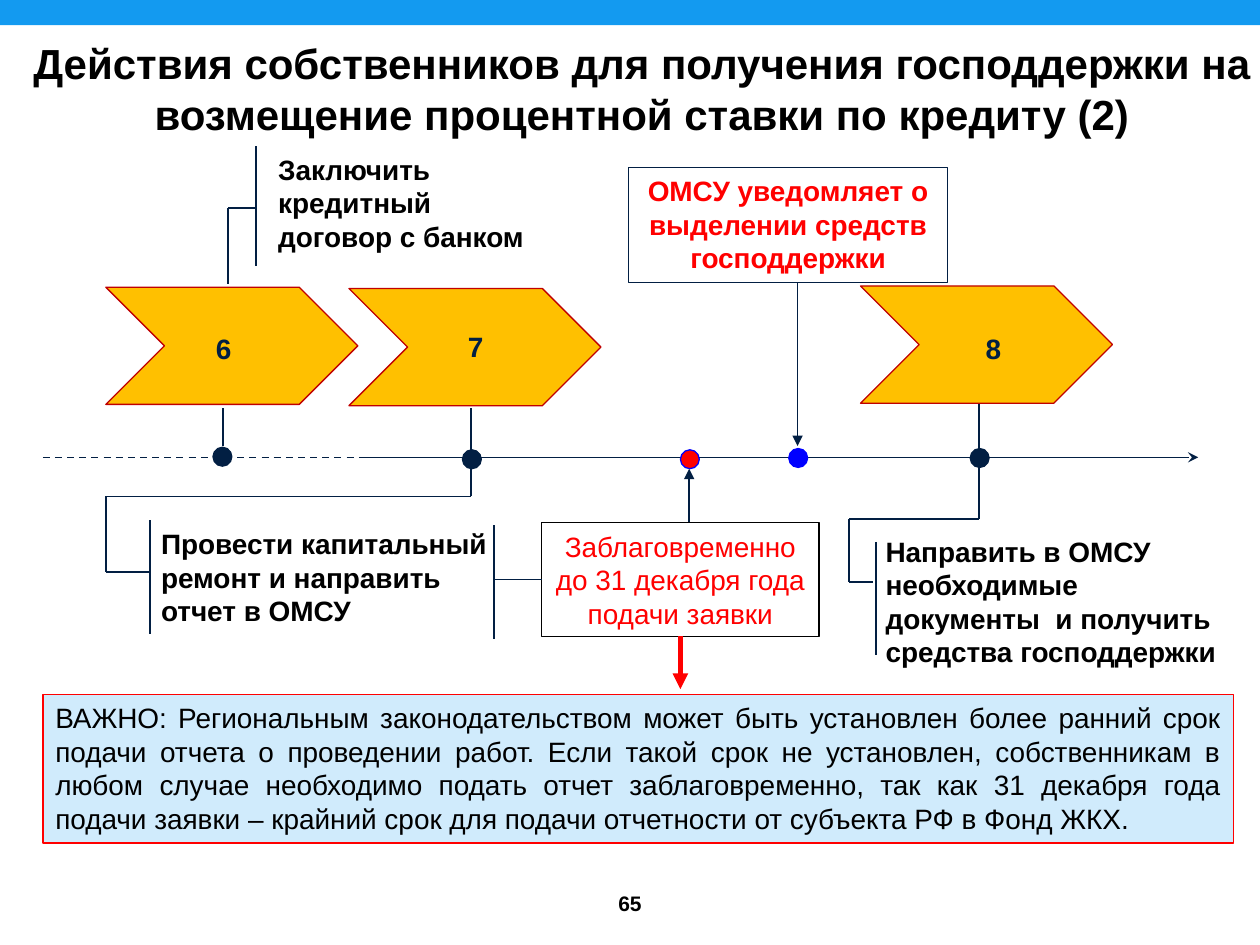
from lxml import etree
from pptx import Presentation
from pptx.dml.color import RGBColor
from pptx.enum.dml import MSO_LINE
from pptx.enum.shapes import MSO_CONNECTOR, MSO_SHAPE
from pptx.enum.text import MSO_ANCHOR, PP_ALIGN
from pptx.oxml.ns import qn
from pptx.util import Inches, Pt

NAVY = RGBColor(0x02, 0x1F, 0x43)
BLUE = RGBColor(0x00, 0x00, 0xFF)
RED = RGBColor(0xFF, 0x00, 0x00)
DARK_RED = RGBColor(0xC0, 0x00, 0x00)
ORANGE = RGBColor(0xFF, 0xC0, 0x00)
PALE_BLUE = RGBColor(0xD0, 0xEB, 0xFC)
BAR_BLUE = RGBColor(0x13, 0x9A, 0xF0)
WHITE = RGBColor(0xFF, 0xFF, 0xFF)
BLACK = RGBColor(0x00, 0x00, 0x00)

presentation = Presentation()
presentation.slide_width = Inches(10)
presentation.slide_height = Inches(7.5)
slide = presentation.slides.add_slide(presentation.slide_layouts[5])
shapes = slide.shapes


def write(shape, text, size=16, color=BLACK, bold=True, align=PP_ALIGN.LEFT,
          anchor=MSO_ANCHOR.TOP):
    frame = shape.text_frame
    frame.word_wrap = True
    frame.vertical_anchor = anchor
    frame.text = text
    paragraph = frame.paragraphs[0]
    paragraph.alignment = align
    font = paragraph.font
    font.name, font.size, font.bold = "Arial", Pt(size), bold
    font.color.rgb = color


def add_line(x1, y1, x2, y2, color=NAVY, width=1, arrow=None):
    line = shapes.add_connector(MSO_CONNECTOR.STRAIGHT, Inches(x1), Inches(y1),
                                Inches(x2), Inches(y2))
    line.line.color.rgb = color
    line.line.width = Pt(width)
    if arrow:
        etree.SubElement(line.line._get_or_add_ln(), qn("a:tailEnd"), type=arrow)
    etree.SubElement(line._element.spPr, qn("a:effectLst"))
    return line


# Title, top bar and page number
title = shapes.title
title.left, title.top = Inches(0.16), Inches(0.25)
title.width, title.height = Inches(9.87), Inches(0.91)
write(title, "Действия собственников для получения господдержки на "
      "возмещение процентной ставки по кредиту (2)", size=24, align=PP_ALIGN.CENTER)

bar = shapes.add_shape(MSO_SHAPE.RECTANGLE, 0, 0, Inches(10), Inches(0.2))
bar.shadow.inherit = False
bar.fill.solid()
bar.fill.fore_color.rgb = BAR_BLUE
bar.line.fill.background()

page_number = shapes.add_textbox(Inches(4.56), Inches(6.97), Inches(0.88), Inches(0.39))
write(page_number, "65", size=12, align=PP_ALIGN.CENTER, anchor=MSO_ANCHOR.MIDDLE)

# Numbered steps: chevron left and top, label left and top
for number, left, top, label_left, label_top in [
    ("6", 0.84, 2.28, 1.52, 2.58),
    ("7", 2.77, 2.29, 3.52, 2.57),
    ("8", 6.83, 2.27, 7.63, 2.58),
]:
    chevron = shapes.add_shape(MSO_SHAPE.CHEVRON, Inches(left), Inches(top),
                               Inches(2), Inches(0.93))
    chevron.shadow.inherit = False
    chevron.fill.solid()
    chevron.fill.fore_color.rgb = ORANGE
    chevron.line.color.rgb = DARK_RED
    chevron.line.width = Pt(0.75)
    label = shapes.add_textbox(Inches(label_left), Inches(label_top),
                               Inches(0.51), Inches(0.37))
    write(label, number, color=NAVY, align=PP_ALIGN.CENTER)

# Step descriptions
for text, left, top, width, height in [
    ("Заключить кредитный договор с банком", 2.11, 1.16, 2.23, 0.91),
    ("Провести капитальный ремонт и направить отчет в ОМСУ", 1.18, 4.13, 2.86, 0.91),
    ("Направить в ОМСУ необходимые документы  и получить средства господдержки",
     6.93, 4.19, 2.85, 1.18),
]:
    description = shapes.add_textbox(Inches(left), Inches(top), Inches(width), Inches(height))
    write(description, text)

# Time axis and the brackets that tie steps to descriptions
past_axis = add_line(0.34, 3.63, 2.89, 3.63)
past_axis.line.dash_style = MSO_LINE.DASH
add_line(2.89, 3.63, 9.51, 3.63, arrow="stealth")

for x1, y1, x2, y2 in [
    # step 6
    (1.77, 3.24, 1.77, 3.54),
    (1.81, 2.25, 1.81, 1.65),
    (1.81, 1.65, 2.03, 1.65),
    (2.03, 1.16, 2.03, 2.11),
    # step 7
    (3.74, 3.24, 3.74, 3.94),
    (3.74, 3.94, 0.84, 3.94),
    (0.84, 3.94, 0.84, 4.54),
    (0.84, 4.54, 1.19, 4.54),
    (1.19, 4.13, 1.19, 5.03),
    (3.92, 4.17, 3.92, 5.07),
    # step 8
    (7.77, 3.21, 7.77, 4.12),
    (7.77, 4.12, 6.74, 4.12),
    (6.74, 4.12, 6.74, 4.62),
    (6.74, 4.62, 6.93, 4.62),
    (6.95, 4.3, 6.95, 5.2),
]:
    add_line(x1, y1, x2, y2)

for left, top, fill, outline in [
    (1.69, 3.55, NAVY, NAVY),
    (3.67, 3.57, NAVY, NAVY),
    (5.4, 3.57, RED, BLUE),
    (6.26, 3.56, BLUE, BLUE),
    (7.7, 3.56, NAVY, NAVY),
]:
    dot = shapes.add_shape(MSO_SHAPE.OVAL, Inches(left), Inches(top),
                           Inches(0.15), Inches(0.15))
    dot.shadow.inherit = False
    dot.fill.solid()
    dot.fill.fore_color.rgb = fill
    dot.line.color.rgb = outline
    dot.line.width = Pt(0.75)

# Framed notes and their arrows
add_line(6.33, 2.24, 6.33, 3.54, arrow="triangle")
add_line(5.47, 4.15, 5.47, 3.72, arrow="triangle")

notes = {}
for name, text, left, top, width, height, fill, outline, color, bold, align in [
    ("notice", "ОМСУ уведомляет о выделении средств господдержки",
     4.99, 1.33, 2.53, 0.91, None, NAVY, RED, True, PP_ALIGN.CENTER),
    ("deadline", "Заблаговременно до 31 декабря года подачи заявки",
     4.3, 4.15, 2.2, 0.9, WHITE, BLACK, RED, False, PP_ALIGN.CENTER),
    ("important", "ВАЖНО: Региональным законодательством может быть установлен более "
     "ранний срок подачи отчета о проведении работ. Если такой срок не установлен, "
     "собственникам в любом случае необходимо подать отчет заблаговременно, так как "
     "31 декабря года подачи заявки – крайний срок для подачи отчетности от субъекта "
     "РФ в Фонд ЖКХ.",
     0.34, 5.51, 9.45, 1.18, PALE_BLUE, RED, BLACK, False, PP_ALIGN.JUSTIFY),
]:
    note = shapes.add_shape(MSO_SHAPE.RECTANGLE, Inches(left), Inches(top),
                            Inches(width), Inches(height))
    note.shadow.inherit = False
    if fill is None:
        note.fill.background()
    else:
        note.fill.solid()
        note.fill.fore_color.rgb = fill
    note.line.color.rgb = outline
    note.line.width = Pt(0.75)
    write(note, text, color=color, bold=bold, align=align)
    notes[name] = note

deadline_link = add_line(3.92, 4.6, 4.3, 4.6)
deadline_link.end_connect(notes["deadline"], 1)
warning_arrow = add_line(5.4, 5.05, 5.4, 5.47, color=RED, width=3, arrow="triangle")
warning_arrow.begin_connect(notes["deadline"], 2)

presentation.save("out.pptx")
